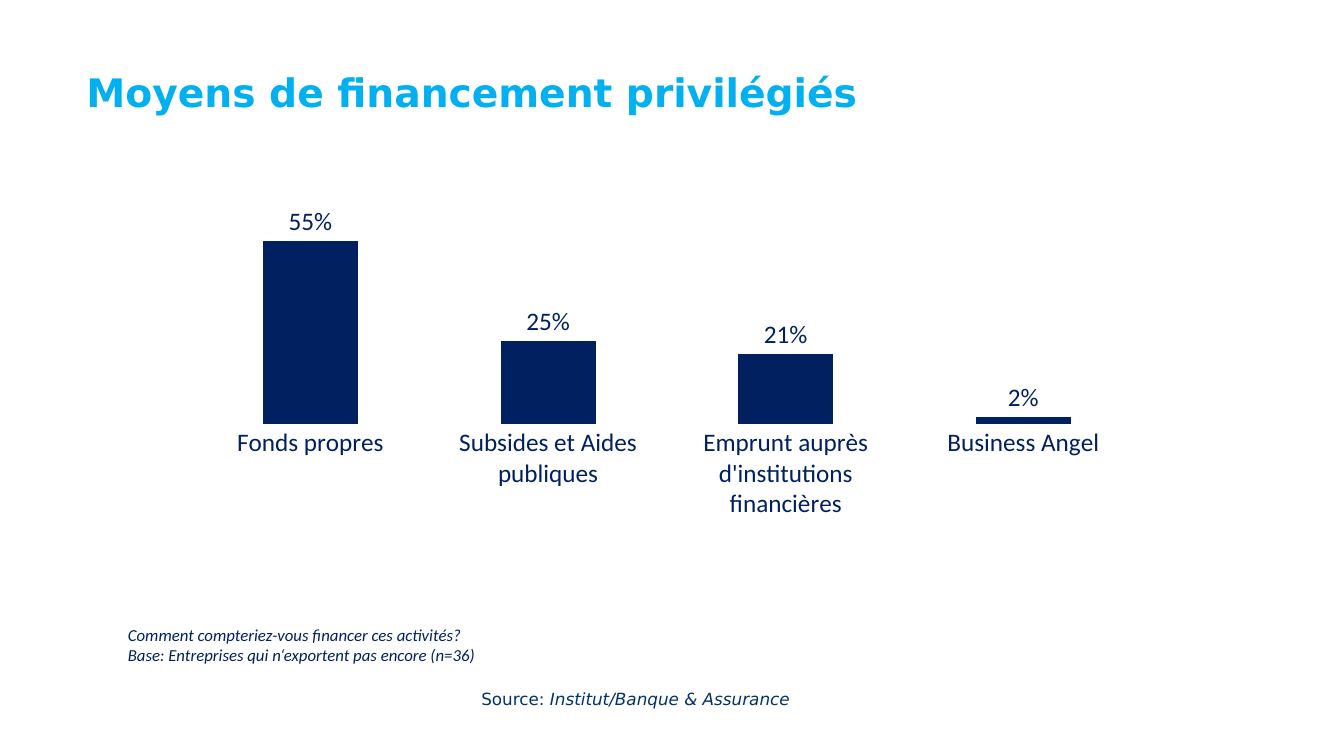
"""Builds a slide with a column chart of preferred means of funding."""
import pptx
import pptx.chart.data
import pptx.dml.color
import pptx.enum.chart
import pptx.enum.text
import pptx.oxml
import pptx.oxml.ns
import pptx.util

Inches = pptx.util.Inches
Pt = pptx.util.Pt
RGBColor = pptx.dml.color.RGBColor
ALIGN = pptx.enum.text.PP_ALIGN
ANCHOR = pptx.enum.text.MSO_ANCHOR
CHART = pptx.enum.chart

SKY = RGBColor(0x00, 0xB0, 0xF0)
NAVY = RGBColor(0x00, 0x20, 0x60)
SLATE = RGBColor(0x00, 0x33, 0x66)

FUNDS = {
    "Fonds propres": 0.55,
    "Subsides et Aides publiques": 0.25,
    "Emprunt auprès d'institutions financières": 0.21,
    "Business Angel": 0.02,
}


class Page:
    head = "DejaVu Sans"
    body = "Calibri"

    def __init__(self, slide):
        self.slide = slide

    def text(self, box, lines, font, size, color, bold=False,
             align=ALIGN.LEFT, anchor=ANCHOR.TOP, space=1.0):
        frame = self.slide.shapes.add_textbox(*map(Inches, box)).text_frame
        frame.word_wrap = True
        frame.vertical_anchor = anchor
        for row, runs in enumerate(lines):
            para = frame.add_paragraph() if row else frame.paragraphs[0]
            para.alignment = align
            para.line_spacing = space
            for words, slant in runs:
                run = para.add_run()
                run.text = words
                run.font.name = font
                run.font.size = Pt(size)
                run.font.bold = bold
                run.font.italic = slant
                run.font.color.rgb = color

    def chart(self, box, funds, area):
        data = pptx.chart.data.CategoryChartData(number_format="0%")
        data.categories = list(funds)
        data.add_series("Series 1", list(funds.values()))
        chart = self.slide.shapes.add_chart(
            CHART.XL_CHART_TYPE.COLUMN_CLUSTERED, *map(Inches, box), data).chart
        chart.has_legend = False
        chart.has_title = False
        chart.font.name = self.body
        chart.font.size = Pt(18)
        chart.font.color.rgb = NAVY

        scale = chart.value_axis
        scale.minimum_scale = 0
        scale.maximum_scale = 0.6
        scale.has_major_gridlines = False
        scale.visible = False
        names = chart.category_axis
        names.major_tick_mark = CHART.XL_TICK_MARK.NONE
        names.format.line.fill.background()

        plot = chart.plots[0]
        plot.gap_width = 150
        plot.overlap = -25
        plot.vary_by_categories = False
        bars = plot.series[0]
        bars.format.fill.solid()
        bars.format.fill.fore_color.rgb = NAVY
        plot.has_data_labels = True
        labels = plot.data_labels
        labels.show_value = True
        labels.number_format = "0%"
        labels.number_format_is_linked = False
        labels.position = CHART.XL_LABEL_POSITION.OUTSIDE_END
        labels.font.name = self.body
        labels.font.size = Pt(18)
        labels.font.color.rgb = NAVY
        self.place(chart, area)

    def place(self, chart, area):
        field = chart.element.xpath("c:chart/c:plotArea")[0]
        for old in field.xpath("c:layout"):
            field.remove(old)
        sizes = "".join(f'<c:{key} val="{val}"/>'
                        for key, val in zip("xywh", area))
        field.insert(0, pptx.oxml.parse_xml(
            f'<c:layout {pptx.oxml.ns.nsdecls("c")}><c:manualLayout>'
            '<c:layoutTarget val="inner"/>'
            '<c:xMode val="edge"/><c:yMode val="edge"/>'
            f'{sizes}</c:manualLayout></c:layout>'))


def main():
    deck = pptx.Presentation()
    deck.slide_width = Inches(13.33)
    deck.slide_height = Inches(7.5)
    page = Page(deck.slides.add_slide(deck.slide_layouts[6]))
    page.text((0.76, 0.55, 12, 0.79),
              [[("Moyens de financement privilégiés", False)]],
              page.head, 28, SKY, bold=True, anchor=ANCHOR.MIDDLE, space=0.9)
    page.text((2.82, 6.78, 6.97, 0.3),
              [[("Source: ", False), ("Institut/Banque & Assurance", True)]],
              page.head, 12, SLATE, align=ALIGN.CENTER)
    page.text((1.17, 6.15, 6.67, 0.5),
              [[("Comment compteriez-vous financer ces activités?", True)],
               [("Base: Entreprises qui n‘exportent pas encore (n=36)", True)]],
              page.body, 12, NAVY)
    page.chart((1.6, 1.8, 10.03, 3.88), FUNDS, (0.03, 0.11, 0.94, 0.51))
    deck.save("out.pptx")


if __name__ == "__main__":
    main()
